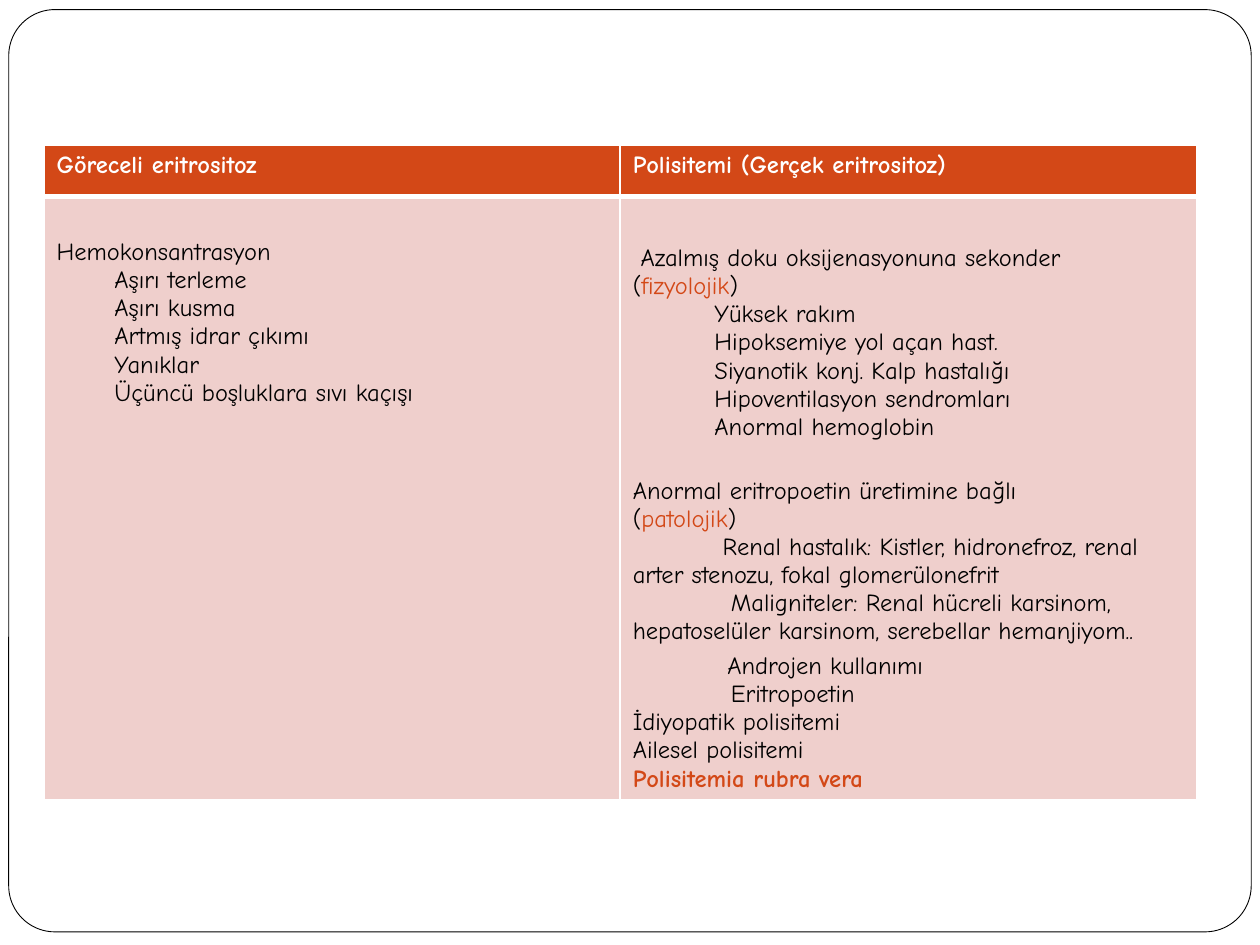
import dataclasses

import pptx
import pptx.dml.color
import pptx.enum.shapes
import pptx.oxml.ns
import pptx.util
from lxml import etree

Pt = pptx.util.Pt
RGB = pptx.dml.color.RGBColor.from_string


@dataclasses.dataclass(frozen=True)
class Theme:
    font: str = "Comic Neue"
    size: float = 14
    text: str = "000000"
    white: str = "FFFFFF"
    accent: str = "D34817"
    tint: str = "EFCFCC"
    frame_line: float = 0.5
    border: float = 1
    header_border: float = 3


THEME = Theme()
PLAIN = {"color": THEME.text, "bold": False}
ACCENT = {"color": THEME.accent, "bold": False}
STRONG = {"color": THEME.accent, "bold": True}
HEADER = {"color": THEME.white, "bold": True}


def para(*runs, fmt=PLAIN, indent=0, before=0):
    """Describe a paragraph; a run is a string or a (string, format) pair."""
    runs = [(r, fmt) if isinstance(r, str) else r for r in runs]
    return {"runs": runs, "indent": indent, "before": before}


HEADERS = ["Göreceli eritrositoz", "Polisitemi (Gerçek eritrositoz)"]

RELATIVE = [para("Hemokonsantrasyon")] + [
    para(text, indent=33)
    for text in ("Aşırı terleme", "Aşırı kusma", "Artmış idrar çıkımı",
                 "Yanıklar", "Üçüncü boşluklara sıvı kaçışı")
]

POLYCYTHEMIA = [
    para("Azalmış doku oksijenasyonuna sekonder", indent=4.5),
    para("(", ("fizyolojik", ACCENT), ")"),
    *[para(text, indent=46.7)
      for text in ("Yüksek rakım", "Hipoksemiye yol açan hast.",
                   "Siyanotik konj. Kalp hastalığı",
                   "Hipoventilasyon sendromları", "Anormal hemoglobin")],
    para("Anormal eritropoetin üretimine bağlı", before=20.3),
    para("(", ("patolojik", ACCENT), ")"),
    para("Renal hastalık: Kistler, hidronefroz, renal arter stenozu, "
         "fokal glomerülonefrit", indent=51.4),
    para("Maligniteler: Renal hücreli karsinom, hepatoselüler karsinom, "
         "serebellar hemanjiyom..", indent=56),
    para("Androjen kullanımı", indent=54, before=3.6),
    para("Eritropoetin", indent=56),
    para("İdiyopatik polisitemi"),
    para("Ailesel polisitemi"),
    para("Polisitemia rubra vera", fmt=STRONG),
]


def set_borders(cell, widths):
    tcPr = cell._tc.get_or_add_tcPr()
    for side, width in widths.items():
        ln = etree.SubElement(tcPr, pptx.oxml.ns.qn(f"a:ln{side}"),
                              w=str(Pt(width)))
        fill = etree.SubElement(ln, pptx.oxml.ns.qn("a:solidFill"))
        etree.SubElement(fill, pptx.oxml.ns.qn("a:srgbClr"), val=THEME.white)


def write_paragraph(p, content):
    p.space_before = Pt(content["before"])
    p._p.get_or_add_pPr().set("indent", str(Pt(content["indent"])))
    for text, fmt in content["runs"]:
        r = p.add_run()
        r.text = text
        values = {"name": THEME.font, "size": Pt(THEME.size),
                  "bold": fmt["bold"]}
        for name, value in values.items():
            setattr(r.font, name, value)
        r.font.color.rgb = RGB(fmt["color"])


def fill_cell(cell, paragraphs, color, borders, margin_top=3.6):
    set_borders(cell, borders)
    cell.fill.solid()
    cell.fill.fore_color.rgb = RGB(color)
    cell.margin_top = Pt(margin_top)
    tf = cell.text_frame
    for i, content in enumerate(paragraphs):
        write_paragraph(tf.add_paragraph() if i else tf.paragraphs[0], content)


def add_frame(slide, left, top, width, height):
    sp = slide.shapes.add_shape(
        pptx.enum.shapes.MSO_SHAPE.ROUNDED_RECTANGLE,
        Pt(left), Pt(top), Pt(width), Pt(height))
    sp.adjustments[0] = 0.05
    sp.shadow.inherit = False
    sp.fill.solid()
    sp.fill.fore_color.rgb = RGB(THEME.white)
    sp.line.color.rgb = RGB(THEME.text)
    sp.line.width = Pt(THEME.frame_line)


def add_comparison(slide, left, top, width, height, header_height=29.2):
    table = slide.shapes.add_table(
        2, 2, Pt(left), Pt(top), Pt(width), Pt(height)).table
    for name in ("first_row", "horz_banding"):
        setattr(table, name, False)
    for row, row_height in zip(table.rows, (header_height,
                                            height - header_height)):
        row.height = Pt(row_height)
    for column in table.columns:
        column.width = Pt(width / 2)

    thin, thick = THEME.border, THEME.header_border
    header_borders = {"L": thin, "R": thin, "T": thin, "B": thick}
    body_borders = {"L": thin, "R": thin, "T": thick, "B": thin}
    bodies = [(RELATIVE, 24), (POLYCYTHEMIA, 27.4)]
    for i, (header, (body, margin)) in enumerate(zip(HEADERS, bodies)):
        fill_cell(table.cell(0, i), [para(header, fmt=HEADER)],
                  THEME.accent, header_borders)
        fill_cell(table.cell(1, i), body, THEME.tint, body_borders, margin)


def main():
    prs = pptx.Presentation()
    prs.slide_width, prs.slide_height = Pt(720), Pt(540)
    slide = prs.slides.add_slide(prs.slide_layouts[6])
    add_frame(slide, 5, 5.5, 710, 527)
    add_comparison(slide, 25.2, 83, 658.4, 373)
    prs.save("out.pptx")


if __name__ == "__main__":
    main()
